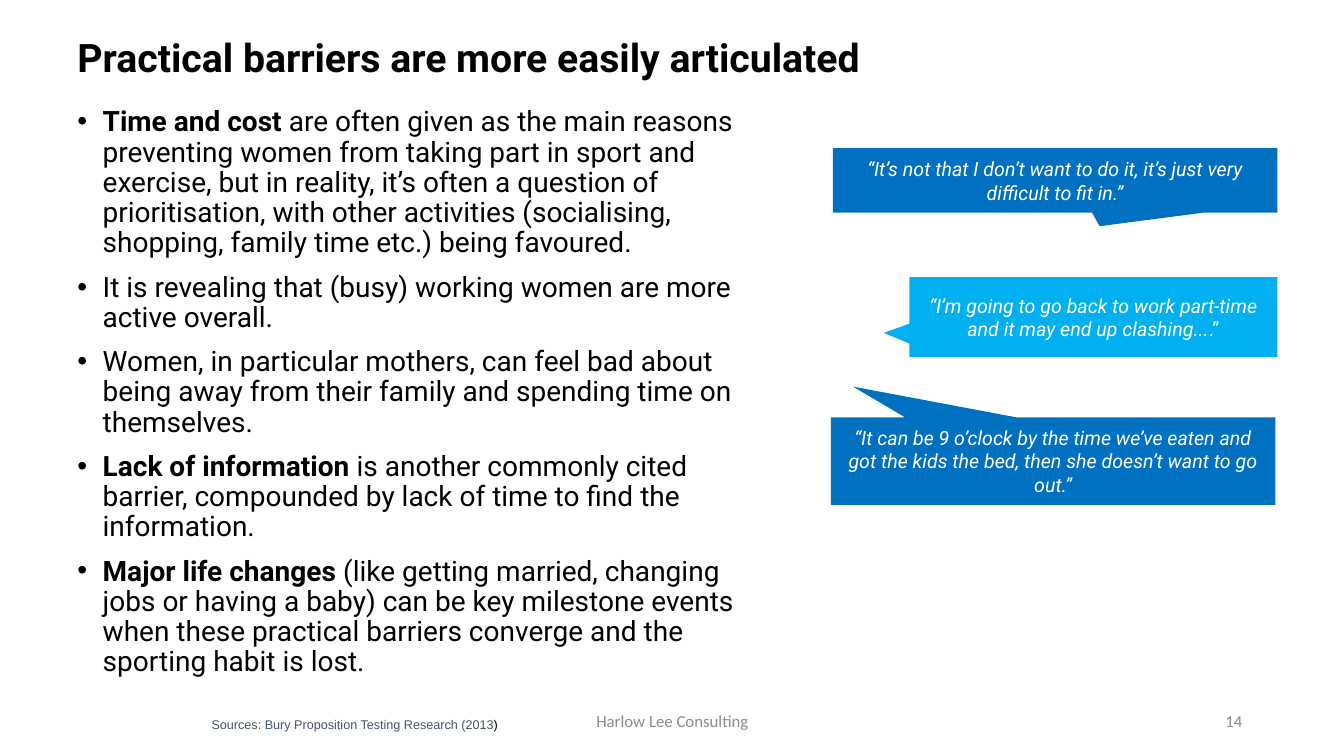
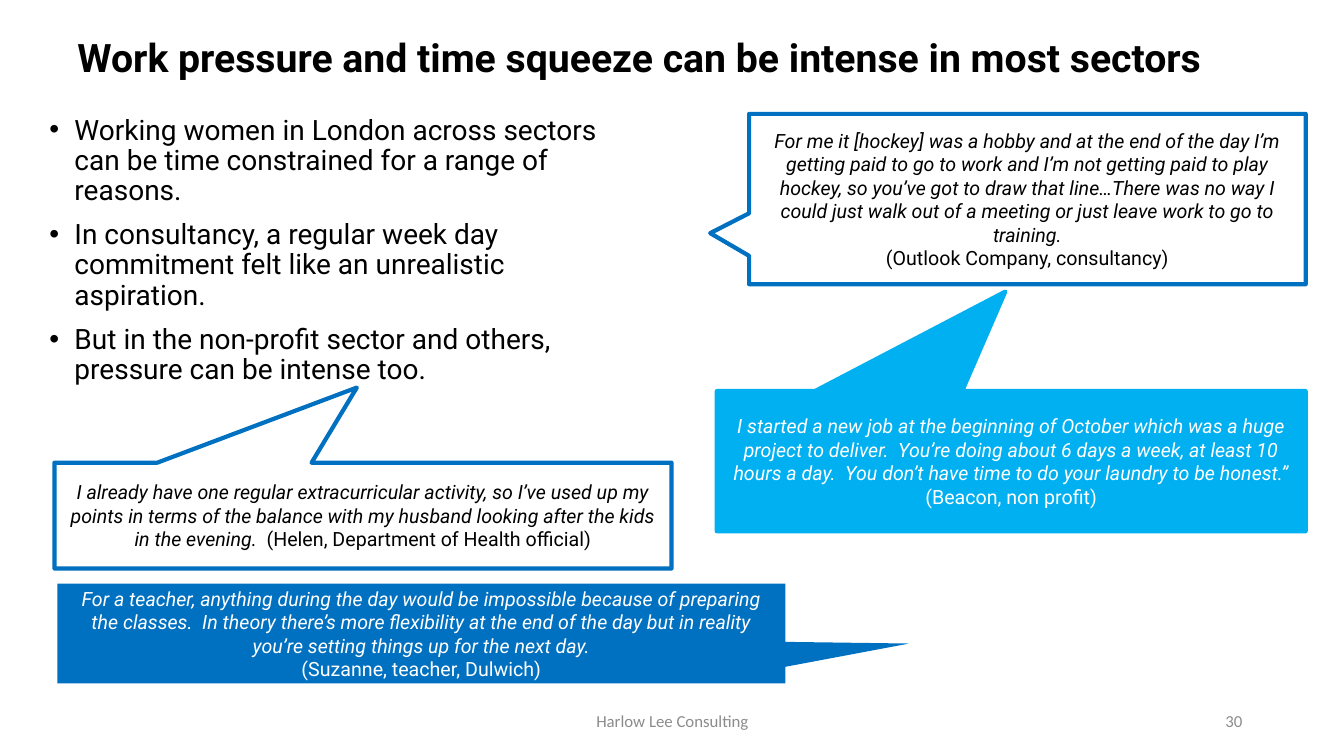
from lxml import etree
from pptx import Presentation
from pptx.dml.color import RGBColor
from pptx.enum import shapes, text
from pptx.oxml import ns
from pptx.util import Inches, Pt

BLACK = RGBColor(0x00, 0x00, 0x00)
WHITE = RGBColor(0xFF, 0xFF, 0xFF)
GREY = RGBColor(0x8C, 0x8C, 0x8C)
SLATE = RGBColor(0x44, 0x54, 0x6A)
BLUE = RGBColor(0x00, 0x70, 0xC0)
SKY = RGBColor(0x00, 0xB0, 0xF0)

LEFT, CENTER, RIGHT = text.PP_ALIGN.LEFT, text.PP_ALIGN.CENTER, text.PP_ALIGN.RIGHT
TOP, MIDDLE = text.MSO_ANCHOR.TOP, text.MSO_ANCHOR.MIDDLE

TITLE = {"name": "Roboto", "size": Pt(28), "bold": True}
BODY = {"name": "Roboto", "size": Pt(20)}
QUOTE = {"name": "Roboto", "size": Pt(14)}
FOOT = {"name": "Calibri", "size": Pt(12)}
SOURCE = {"name": "Arial", "size": Pt(9)}
BOLD = {"bold": True}
SLANT = {"italic": True}

# Look of a callout: fill, line, text colour
OUTLINE = (None, BLUE, BLACK)
DARK = (BLUE, None, WHITE)
LIGHT = (SKY, None, WHITE)
EDGED = (SKY, SKY, WHITE)


def place(box):
    return [Inches(n) for n in box]


def add_run(para, words, style, color):
    run = para.add_run()
    run.text = words
    for key, value in style.items():
        setattr(run.font, key, value)
    run.font.color.rgb = color


def set_frame(frame, anchor, wrap=True):
    frame.word_wrap = wrap
    frame.vertical_anchor = anchor


def add_paras(frame, count, align):
    """Return the given number of aligned paragraphs of a frame."""
    paras = [frame.paragraphs[0]] + [frame.add_paragraph() for _ in range(count - 1)]
    for para in paras:
        para.alignment = align
    return paras


def add_line(slide, box, words, style, color=BLACK, align=LEFT):
    """Place one paragraph, centred vertically in its box."""
    frame = slide.shapes.add_textbox(*place(box)).text_frame
    set_frame(frame, MIDDLE)
    para = add_paras(frame, 1, align)[0]
    add_run(para, words, style, color)
    return para


def add_frame(slide, title, number):
    """Place the title and footer that all slides share."""
    head = add_line(slide, (0.67, -0.03, 12, 1.25), title, TITLE)
    head.line_spacing = 0.9
    add_line(slide, (4.42, 6.95, 4.5, 0.4), "Harlow Lee Consulting", FOOT, GREY, CENTER)
    add_line(slide, (9.42, 6.95, 3, 0.4), str(number), FOOT, GREY, RIGHT)


def add_bullets(slide, box, points):
    """Place bullets, each a pair of bold lead and plain rest."""
    frame = slide.shapes.add_textbox(*place(box)).text_frame
    set_frame(frame, TOP)
    for i, (para, (lead, rest)) in enumerate(zip(add_paras(frame, len(points), LEFT), points)):
        para.line_spacing = 0.9
        para.space_before = Pt(10 if i else 0)
        props = para._p.get_or_add_pPr()
        props.set("marL", str(Inches(0.25)))
        props.set("indent", str(-Inches(0.25)))
        font = etree.SubElement(props, ns.qn("a:buFont"))
        font.set("typeface", "Arial")
        etree.SubElement(props, ns.qn("a:buChar")).set("char", "•")
        if lead:
            add_run(para, lead, BODY | BOLD, BLACK)
        add_run(para, rest, BODY, BLACK)


def add_callout(slide, box, tip, look, paras):
    """Place a speech box; each paragraph is a list of (words, style)."""
    fill, line, color = look
    shape = slide.shapes.add_shape(shapes.MSO_SHAPE.RECTANGULAR_CALLOUT, *place(box))
    shape.shadow.inherit = False
    for i, value in enumerate(tip):
        shape.adjustments[i] = value
    if fill:
        shape.fill.solid()
        shape.fill.fore_color.rgb = fill
    else:
        shape.fill.background()
    if line:
        shape.line.color.rgb = line
        shape.line.width = Pt(3)
    else:
        shape.line.fill.background()
    set_frame(shape.text_frame, MIDDLE)
    for para, parts in zip(add_paras(shape.text_frame, len(paras), CENTER), paras):
        for words, style in parts:
            add_run(para, words, QUOTE | style, color)


def add_source(slide, box):
    note = slide.shapes.add_shape(shapes.MSO_SHAPE.RECTANGLE, *place(box))
    note.shadow.inherit = False
    note.fill.solid()
    note.fill.fore_color.rgb = WHITE
    note.line.fill.background()
    set_frame(note.text_frame, TOP, False)
    para = add_paras(note.text_frame, 1, LEFT)[0]
    add_run(para, "Sources: Bury Proposition Testing Research (2013", SOURCE, SLATE)
    add_run(para, ")", SOURCE, BLACK)


def build_barriers(slide):
    add_frame(slide, "Practical barriers are more easily articulated", 14)
    add_bullets(slide, (0.67, 1.02, 6.92, 6.03), [
        ("Time and cost ",
         "are often given as the main reasons preventing women from taking part in sport "
         "and exercise, but in reality, it’s often a question of prioritisation, with other "
         "activities (socialising, shopping, family time etc.) being favoured."),
        ("", "It is revealing that (busy) working women are more active overall."),
        ("", "Women, in particular mothers, can feel bad about being away from their family "
             "and spending time on themselves."),
        ("Lack of information ",
         "is another commonly cited barrier, compounded by lack of time to find the "
         "information."),
        ("Major life changes ",
         "(like getting married, changing jobs or having a baby) can be key milestone events "
         "when these practical barriers converge and the sporting habit is lost."),
    ])
    add_source(slide, (2, 7.06, 3.12, 0.25))
    add_callout(slide, (8.26, 1.47, 4.41, 0.64), (0.1, 0.71), DARK, [
        [("“It’s not that I don’t want to do it, it’s just very difficult to fit in.”", SLANT)],
    ])
    add_callout(slide, (9.02, 2.75, 3.65, 0.79), (-0.57, 0.2), LIGHT, [
        [("“I’m going to go back to work part-time and it may end up clashing...", SLANT),
         (".”", {})],
    ])
    add_callout(slide, (8.24, 4.14, 4.41, 0.87), (-0.45, -0.85), DARK, [
        [("“It can be 9 o’clock by the time we’ve eaten and got the kids the bed, then she "
          "doesn’t want to go out.”", SLANT)],
    ])


def build_squeeze(slide):
    add_frame(slide, "Work pressure and time squeeze can be intense in most sectors", 30)
    add_bullets(slide, (0.39, 1.1, 5.91, 4.43), [
        ("", "Working women in London across sectors can be time constrained for a range of "
             "reasons."),
        ("", "In consultancy, a regular week day commitment felt like an unrealistic "
             "aspiration."),
        ("", "But in the non-profit sector and others, pressure can be intense too."),
    ])
    add_callout(slide, (7.43, 1.13, 5.52, 1.69), (-0.57, 0.2), OUTLINE, [
        [("For me it [hockey] was a hobby and at the end of the day I’m getting paid to go to "
          "work and I’m not getting paid to play hockey, so you’ve got to draw that "
          "line…There was no way I could just walk out of a meeting or just leave work to go "
          "to training.", SLANT)],
        [("(Outlook Company, consultancy)", {})],
    ])
    add_callout(slide, (7.11, 3.88, 5.84, 1.39), (-0.01, -1.21), EDGED, [
        [("I started a new job at the beginning of October which was a huge project to "
          "deliver.  You’re doing about 6 days a week, at least 10 hours a day.  You don’t "
          "have time to do your laundry to be honest.”", SLANT)],
        [("(Beacon, non profit)", {})],
    ])
    add_callout(slide, (0.54, 4.59, 6.12, 1.05), (-0.01, -1.21), OUTLINE, [
        [("I already have one regular extracurricular activity, so I’ve used up my points in "
          "terms of the balance with my husband looking after the kids in the evening.  ",
          SLANT),
         ("(Helen, Department of Health official)", {})],
    ])
    add_callout(slide, (0.57, 5.79, 7.22, 0.99), (0.67, 0.1), DARK, [
        [("For a teacher, anything during the day would be impossible because of preparing "
          "the classes.  In theory there’s more flexibility at the end of the day but in "
          "reality you’re setting things up for the next day.", SLANT)],
        [("(Suzanne, teacher, Dulwich)", {})],
    ])


def main():
    deck = Presentation()
    deck.slide_width, deck.slide_height = Inches(13.33), Inches(7.5)
    for build in (build_barriers, build_squeeze):
        build(deck.slides.add_slide(deck.slide_layouts[6]))
    deck.save("out.pptx")


if __name__ == "__main__":
    main()
